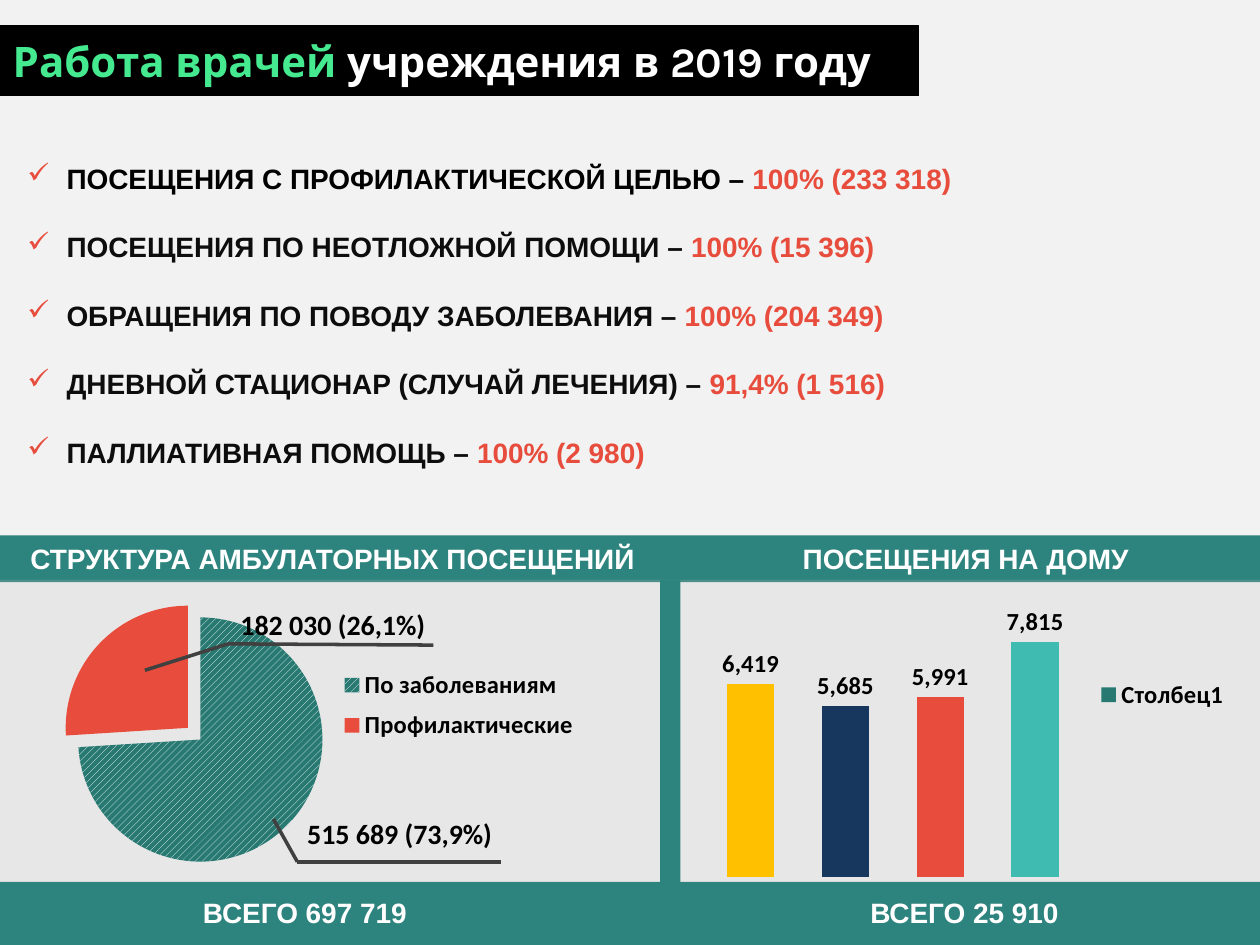
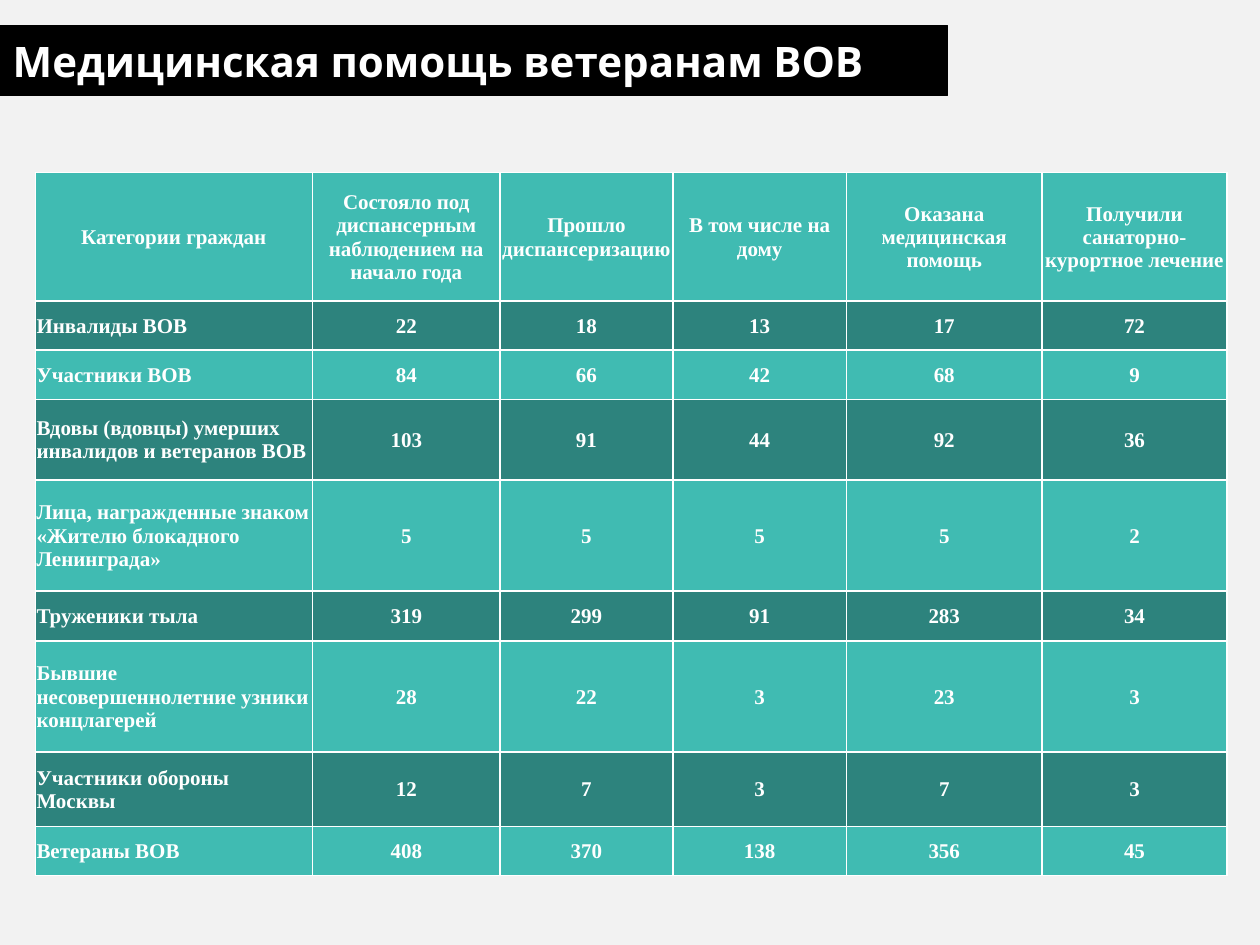
import pptx
import pptx.chart.data
import pptx.dml.color
import pptx.enum.chart
import pptx.enum.dml
import pptx.enum.shapes
import pptx.enum.text
import pptx.oxml
import pptx.oxml.ns
import pptx.util
from lxml import etree

RGB = pptx.dml.color.RGBColor
Inches, Pt = pptx.util.Inches, pptx.util.Pt
ALIGN, ANCHOR = pptx.enum.text.PP_ALIGN, pptx.enum.text.MSO_ANCHOR
qn = pptx.oxml.ns.qn

BLACK, WHITE = RGB(0, 0, 0), RGB(255, 255, 255)
PAPER, GREY, CHARCOAL = RGB(0xF2, 0xF2, 0xF2), RGB(0xBF, 0xBF, 0xBF), RGB(0x40, 0x40, 0x40)
TEAL, DARK_TEAL, LIGHT_TEAL = RGB(0x2D, 0x83, 0x7D), RGB(0x29, 0x79, 0x73), RGB(0x40, 0xBB, 0xB2)
GREEN, RED = RGB(0x45, 0xE9, 0x8F), RGB(0xE7, 0x4C, 0x3C)
YELLOW, NAVY, INK = RGB(0xFF, 0xC0, 0), RGB(0x17, 0x37, 0x5E), RGB(0x0D, 0x0D, 0x0D)

WIDTH, HEIGHT = 10, 7.5
HEAD_TOP, PANEL_TOP, FOOT_TOP = 4.25, 4.6, 7

WORK_TITLE = [("Работа врачей ", GREEN), ("учреждения в 2019 году", WHITE)]
VETERANS_TITLE = [("Медицинская помощь ветеранам ВОВ", WHITE)]

RESULTS = [
    ("ПОСЕЩЕНИЯ С ПРОФИЛАКТИЧЕСКОЙ ЦЕЛЬЮ – ", "100% (233 318)"),
    ("ПОСЕЩЕНИЯ ПО НЕОТЛОЖНОЙ ПОМОЩИ – ", "100% (15 396)"),
    ("ОБРАЩЕНИЯ ПО ПОВОДУ ЗАБОЛЕВАНИЯ – ", "100% (204 349)"),
    ("ДНЕВНОЙ СТАЦИОНАР (СЛУЧАЙ ЛЕЧЕНИЯ) – ", "91,4% (1 516)"),
    ("ПАЛЛИАТИВНАЯ ПОМОЩЬ – ", "100% (2 980)"),
]

# Text, left, top, width
BAND_LABELS = [
    ("СТРУКТУРА АМБУЛАТОРНЫХ ПОСЕЩЕНИЙ", -0.12, HEAD_TOP, 5.52),
    ("ПОСЕЩЕНИЯ НА ДОМУ", 5.91, HEAD_TOP, 3.51),
    ("ВСЕГО 697 719", 0.51, FOOT_TOP + 0.06, 3.82),
    ("ВСЕГО 25 910", 5.9, FOOT_TOP + 0.06, 3.51),
]

# Text, its left and top, then the points of the leader line
CALLOUTS = [
    ("182 030 (26,1%)", 1.81, 4.77, [(1.15, 5.32), (1.81, 5.11), (3.44, 5.12)]),
    ("515 689 (73,9%)", 2.34, 6.43, [(2.17, 6.5), (2.36, 6.84), (3.98, 6.84)]),
]

VISIT_KINDS = {"По заболеваниям": 74, "Профилактические": 26}
HOME_VISITS = {"1": 6419, "2": 5685, "3": 5991, "4": 7815}
HOME_COLOURS = [YELLOW, NAVY, RED, LIGHT_TEAL]

VETERANS = [
    ("Категории граждан", "Состояло под диспансерным наблюдением на начало года",
     "Прошло диспансеризацию", "В том числе на дому", "Оказана медицинская помощь",
     "Получили санаторно-курортное лечение"),
    ("Инвалиды ВОВ", 22, 18, 13, 17, 72),
    ("Участники ВОВ", 84, 66, 42, 68, 9),
    ("Вдовы (вдовцы) умерших инвалидов и ветеранов ВОВ", 103, 91, 44, 92, 36),
    ("Лица, награжденные знаком «Жителю блокадного Ленинграда»", 5, 5, 5, 5, 2),
    ("Труженики тыла", 319, 299, 91, 283, 34),
    ("Бывшие несовершеннолетние узники концлагерей", 28, 22, 3, 23, 3),
    ("Участники обороны Москвы", 12, 7, 3, 7, 3),
    ("Ветераны ВОВ", 408, 370, 138, 356, 45),
]
COLUMN_WIDTHS = [2.2, 1.49, 1.37, 1.38, 1.55, 1.47]
ROW_HEIGHTS = [1.02, 0.39, 0.39, 0.64, 0.88, 0.4, 0.88, 0.59, 0.39]


def inches(*lengths):
    return [Inches(length) for length in lengths]


def set_font(font, name, size, colour=None, bold=True):
    font.name, font.size, font.bold = name, Pt(size), bold
    if colour is not None:
        font.color.rgb = colour


def add_spans(para, spans):
    for text, colour in spans:
        span = para.add_run()
        span.text = text
        span.font.color.rgb = colour


def add_page(deck, title, title_width):
    page = deck.slides.add_slide(deck.slide_layouts[5])
    page.background.fill.solid()
    page.background.fill.fore_color.rgb = PAPER
    bar = page.shapes.title
    bar.left, bar.top, bar.width, bar.height = inches(-0.2, 0.2, title_width, 0.56)
    outline = pptx.oxml.parse_xml(
        f'<a:prstGeom {pptx.oxml.ns.nsdecls("a")} prst="flowChartAlternateProcess"><a:avLst/></a:prstGeom>')
    bar.element.spPr.find(qn("a:xfrm")).addnext(outline)
    bar.fill.solid()
    bar.fill.fore_color.rgb = BLACK
    bar.line.color.rgb = BLACK
    bar.line.width = Pt(0.75)
    frame = bar.text_frame
    frame.auto_size = pptx.enum.text.MSO_AUTO_SIZE.NONE
    frame.word_wrap = True
    frame.vertical_anchor = ANCHOR.MIDDLE
    frame.margin_left = Inches(0.3)
    para = frame.paragraphs[0]
    para.alignment = ALIGN.LEFT
    set_font(para.font, "Karla", 24)
    add_spans(para, title)
    return page


def add_block(page, left, top, width, height, colour, opacity=None):
    block = page.shapes.add_shape(pptx.enum.shapes.MSO_SHAPE.RECTANGLE, *inches(left, top, width, height))
    block.shadow.inherit = False
    block.fill.solid()
    block.fill.fore_color.rgb = colour
    block.line.fill.background()
    if opacity is not None:
        tint = block.element.spPr.find(qn("a:solidFill"))[0]
        etree.SubElement(tint, qn("a:alpha")).set("val", str(opacity * 1000))


def add_text(page, left, top, width, height=0.37):
    box = page.shapes.add_textbox(*inches(left, top, width, height))
    box.text_frame.word_wrap = True
    return box.text_frame


def add_label(page, text, left, top, width, font, colour, alignment=ALIGN.LEFT):
    para = add_text(page, left, top, width).paragraphs[0]
    para.text = text
    para.alignment = alignment
    set_font(para.font, font, 16, colour)


def add_results(page):
    frame = add_text(page, 0.12, 1.23, 9.4, 2.52)
    for index, (text, figure) in enumerate(RESULTS):
        para = frame.paragraphs[0] if index == 0 else frame.add_paragraph()
        para.space_before = Pt(20 if index else 0)
        set_font(para.font, "Arial", 16)
        add_spans(para, [(text, INK if index else BLACK), (figure, RED)])
        properties = para._p.get_or_add_pPr()
        properties.set("marL", str(Inches(0.31)))
        properties.set("indent", str(-Inches(0.31)))
        tint = etree.Element(qn("a:buClr"))
        etree.SubElement(tint, qn("a:srgbClr")).set("val", str(RED))
        tick = etree.Element(qn("a:buChar"))
        tick.set("char", "✓")
        font = properties.find(qn("a:defRPr"))
        font.addprevious(tint)
        font.addprevious(tick)


def add_leader(page, points):
    for start, end in zip(points, points[1:]):
        line = page.shapes.add_connector(pptx.enum.shapes.MSO_CONNECTOR.STRAIGHT, *inches(*start, *end))
        line.line.color.rgb = CHARCOAL
        line.line.width = Pt(2)
        etree.SubElement(line.element.spPr, qn("a:effectLst"))


def make_layout(left, top, width, height, inner=False):
    """Chart part placement, as shares of the chart's size."""
    layout = etree.Element(qn("c:layout"))
    manual = etree.SubElement(layout, qn("c:manualLayout"))
    settings = [("layoutTarget", "inner")] if inner else []
    settings += [("xMode", "edge"), ("yMode", "edge"),
                 ("x", left), ("y", top), ("w", width), ("h", height)]
    for name, value in settings:
        etree.SubElement(manual, qn(f"c:{name}")).set("val", str(value))
    return layout


def add_chart(page, kind, series_name, values, place, plot_place, legend_place):
    data = pptx.chart.data.CategoryChartData()
    data.categories = list(values)
    data.add_series(series_name, list(values.values()))
    chart = page.shapes.add_chart(kind, *inches(*place), data).chart
    chart.has_title = False
    set_font(chart.font, "Calibri", 18, BLACK, bold=False)
    chart.has_legend = True
    legend = chart.legend
    legend.position = pptx.enum.chart.XL_LEGEND_POSITION.RIGHT
    legend.include_in_layout = False
    set_font(legend.font, "Calibri", 14, BLACK)
    area = chart.plots[0]._element.getparent()
    for parent, layout in [(area, make_layout(*plot_place, inner=True)),
                           (legend._element, make_layout(*legend_place))]:
        for old in parent.findall(qn("c:layout")):
            parent.remove(old)
        parent.insert(0 if parent is area else 1, layout)
    return chart


def paint(part, colour):
    part.format.fill.solid()
    part.format.fill.fore_color.rgb = colour


def add_visit_pie(page):
    chart = add_chart(page, pptx.enum.chart.XL_CHART_TYPE.PIE, "Series 1", VISIT_KINDS,
                      (-0.07, 4.6, 5.46, 2.66), (0.01, 0.07, 0.57, 0.78), (0.5, 0.24, 0.36, 0.27))
    series = chart.plots[0].series[0]
    hatch = series.points[0].format.fill
    hatch.patterned()
    hatch.pattern = pptx.enum.dml.MSO_PATTERN.WIDE_UPWARD_DIAGONAL
    hatch.fore_color.rgb, hatch.back_color.rgb = WHITE, DARK_TEAL
    paint(series.points[1], RED)
    explosion = etree.Element(qn("c:explosion"))
    explosion.set("val", "7")
    series._element.find(qn("c:dPt")).addprevious(explosion)


def add_home_columns(page):
    chart = add_chart(page, pptx.enum.chart.XL_CHART_TYPE.COLUMN_CLUSTERED, "Столбец1", HOME_VISITS,
                      (5.16, 4.7, 5.28, 2.76), (0.08, 0.04, 0.57, 0.78), (0.66, 0.24, 0.22, 0.11))
    for axis in (chart.category_axis, chart.value_axis):
        axis.visible = False
        axis.has_major_gridlines = False
    chart.value_axis.minimum_scale, chart.value_axis.maximum_scale = 0, 9000
    plot = chart.plots[0]
    plot.gap_width = 100
    plot.vary_by_categories = False
    series = plot.series[0]
    paint(series, DARK_TEAL)
    for index, colour in enumerate(HOME_COLOURS):
        paint(series.points[index], colour)
    labels = series.data_labels
    labels.show_value = True
    labels.number_format, labels.number_format_is_linked = "#,##0", False
    labels.position = pptx.enum.chart.XL_LABEL_POSITION.OUTSIDE_END
    set_font(labels.font, "Calibri", 14, BLACK)


def add_borders(cell):
    properties = cell._tc.get_or_add_tcPr()
    for index, side in enumerate(("lnL", "lnR", "lnT", "lnB")):
        border = etree.Element(qn(f"a:{side}"), w=str(Pt(1)))
        fill = etree.SubElement(border, qn("a:solidFill"))
        etree.SubElement(fill, qn("a:srgbClr")).set("val", str(WHITE))
        properties.insert(index, border)


def add_veterans_table(page):
    table = page.shapes.add_table(len(VETERANS), len(COLUMN_WIDTHS), *inches(
        0.28, 1.37, sum(COLUMN_WIDTHS), sum(ROW_HEIGHTS))).table
    for column, width in zip(table.columns, COLUMN_WIDTHS):
        column.width = Inches(width)
    for row_index, (row, height, values) in enumerate(zip(table.rows, ROW_HEIGHTS, VETERANS)):
        row.height = Inches(height)
        for column_index, (cell, value) in enumerate(zip(row.cells, values)):
            cell.fill.solid()
            cell.fill.fore_color.rgb = TEAL if row_index % 2 else LIGHT_TEAL
            cell.vertical_anchor = ANCHOR.MIDDLE
            cell.margin_left = cell.margin_right = cell.margin_top = Inches(0.01)
            cell.margin_bottom = 0
            add_borders(cell)
            para = cell.text_frame.paragraphs[0]
            para.text = str(value)
            para.alignment = ALIGN.LEFT if row_index and not column_index else ALIGN.CENTER
            set_font(para.font, "Times New Roman", 12, WHITE)


def main():
    deck = pptx.Presentation()
    deck.slide_width, deck.slide_height = inches(WIDTH, HEIGHT)

    work = add_page(deck, WORK_TITLE, 7.49)
    add_block(work, 0, HEAD_TOP, WIDTH, 0.37, TEAL)
    add_block(work, 0, FOOT_TOP, WIDTH, HEIGHT - FOOT_TOP, TEAL)
    add_block(work, 0, PANEL_TOP, WIDTH, FOOT_TOP - PANEL_TOP, GREY, opacity=20)
    add_visit_pie(work)
    add_block(work, 5.24, PANEL_TOP, 0.16, FOOT_TOP - PANEL_TOP, TEAL)
    add_home_columns(work)
    for text, left, top, width in BAND_LABELS:
        add_label(work, text, left, top, width, "Arial", WHITE, ALIGN.CENTER)
    for text, left, top, points in CALLOUTS:
        add_label(work, text, left, top, 2.6, "Calibri", BLACK)
        add_leader(work, points)
    add_results(work)

    add_veterans_table(add_page(deck, VETERANS_TITLE, 7.72))
    deck.save("out.pptx")


if __name__ == "__main__":
    main()
